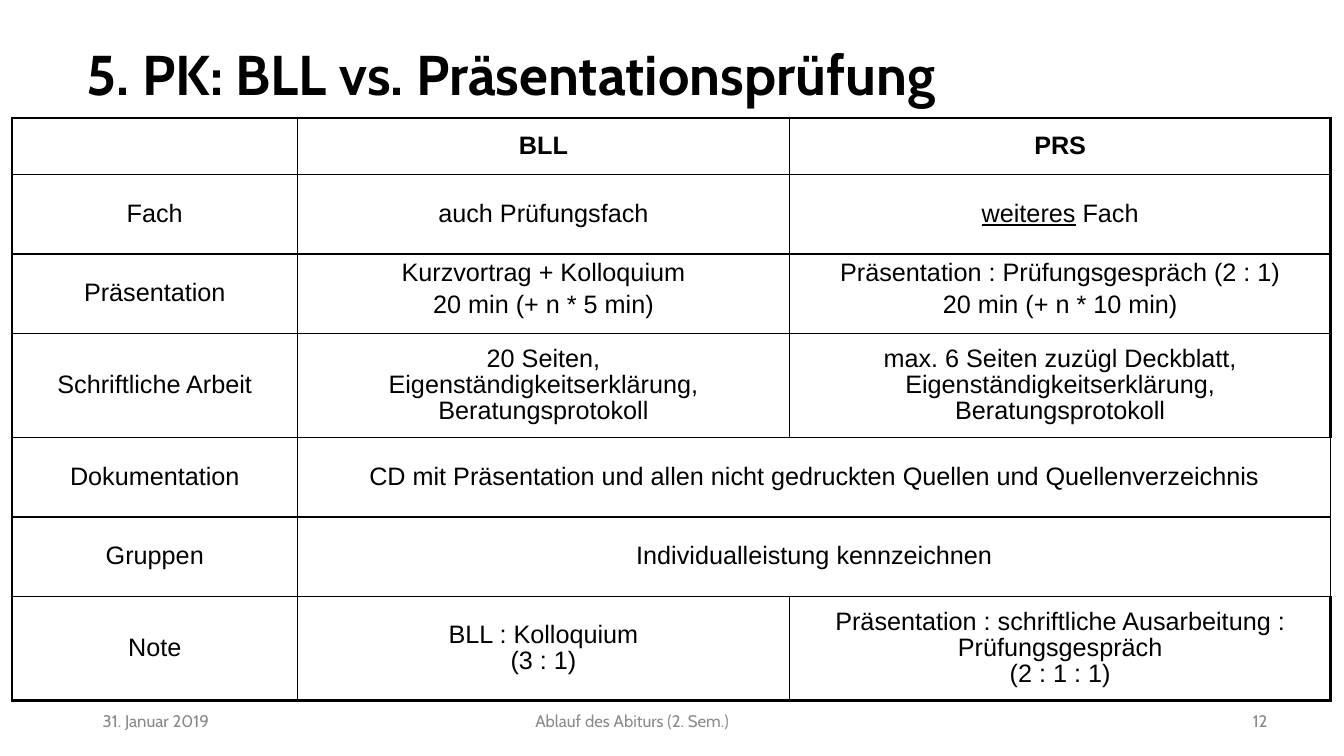
from dataclasses import dataclass
from lxml.etree import SubElement
from pptx import Presentation
from pptx.dml.color import RGBColor
from pptx.enum.text import MSO_ANCHOR, PP_ALIGN
from pptx.oxml.ns import qn
from pptx.util import Inches, Pt


@dataclass(frozen=True)
class Theme:
    ink: str = "000000"
    paper: str = "FFFFFF"
    muted: str = "898989"
    footer: str = "8C8C8C"
    heading_font: str = "Cabin"
    table_font: str = "Arial"
    title_size: int = 40
    table_size: int = 18
    footer_size: int = 12
    outer_line: float = 2.25
    inner_line: float = 1


theme = Theme()


def write(para, text, font, size, color, bold=False, align=PP_ALIGN.LEFT,
          spacing=None, after=None):
    para.alignment = align
    para.line_spacing = spacing
    para.space_after = after
    for row, line in enumerate(text.split("\n")):
        if row:
            para.add_line_break()
        for part, words in enumerate(line.split("_")):
            if words:
                span = para.add_run()
                span.text = words
                span.font.name = font
                span.font.size = Pt(size)
                span.font.bold = bold
                span.font.underline = part % 2 == 1
                span.font.color.rgb = RGBColor.from_string(color)


deck = Presentation()
deck.slide_width = Inches(13.33)
deck.slide_height = Inches(7.5)
unit = deck.slide_height // 750
page = deck.slides.add_slide(deck.slide_layouts[5])

title = page.shapes.title
title.left, title.top, title.width, title.height = (
    n * unit for n in (76, 40, 1166, 82))
title.text_frame.vertical_anchor = MSO_ANCHOR.MIDDLE
title.text_frame.word_wrap = True
write(title.text_frame.paragraphs[0], "5. PK: BLL vs. Präsentationsprüfung",
      theme.heading_font, theme.title_size, theme.ink, bold=True, spacing=Pt(36))

comparison = [
    ["", "BLL", "PRS"],
    ["Fach", "auch Prüfungsfach", "_weiteres_ Fach"],
    ["Präsentation",
     ("Kurzvortrag + Kolloquium", "20 min (+ n * 5 min)"),
     ("Präsentation : Prüfungsgespräch (2 : 1)", "20 min (+ n * 10 min)")],
    ["Schriftliche Arbeit",
     "20 Seiten,\nEigenständigkeitserklärung, Beratungsprotokoll",
     "max. 6 Seiten zuzügl Deckblatt,\nEigenständigkeitserklärung, Beratungsprotokoll"],
    ["Dokumentation",
     "CD mit Präsentation und allen nicht gedruckten Quellen und Quellenverzeichnis",
     None],
    ["Gruppen", "Individualleistung kennzeichnen", None],
    ["Note", "BLL : Kolloquium\n(3 : 1)",
     "Präsentation : schriftliche Ausarbeitung : Prüfungsgespräch\n(2 : 1 : 1)"],
]
column_widths = [283, 488, 537]
row_heights = [56, 79, 79, 103, 79, 79, 103]
last_row, last_column = len(row_heights) - 1, len(column_widths) - 1

table = page.shapes.add_table(
    len(row_heights), len(column_widths), 12 * unit, 117 * unit,
    sum(column_widths) * unit, sum(row_heights) * unit).table
table.first_row = False
table.horz_banding = False
for column, width in zip(table.columns, column_widths):
    column.width = width * unit
for row, height in zip(table.rows, row_heights):
    row.height = height * unit

for r, entries in enumerate(comparison):
    for c, entry in enumerate(entries):
        cell = table.cell(r, c)
        cell.vertical_anchor = MSO_ANCHOR.MIDDLE
        cell.margin_left = cell.margin_right = 12 * unit
        cell.margin_top = cell.margin_bottom = 5 * unit
        properties = cell._tc.get_or_add_tcPr()
        outer_sides = {"a:lnL": c == 0, "a:lnR": c == last_column,
                       "a:lnT": r == 0, "a:lnB": r == last_row}
        for side, outer in outer_sides.items():
            weight = theme.outer_line if outer else theme.inner_line
            line = SubElement(properties, qn(side), w=str(Pt(weight)))
            fill = SubElement(line, qn("a:solidFill"))
            SubElement(fill, qn("a:srgbClr"), val=theme.ink)
        cell.fill.solid()
        cell.fill.fore_color.rgb = RGBColor.from_string(theme.paper)
        if entry is None:
            table.cell(r, c - 1).merge(cell)
            continue
        paragraphs = entry if isinstance(entry, tuple) else (entry,)
        for index, text in enumerate(paragraphs):
            frame = cell.text_frame
            para = frame.add_paragraph() if index else frame.paragraphs[0]
            write(para, text, theme.table_font, theme.table_size, theme.ink,
                  bold=r == 0, align=PP_ALIGN.CENTER,
                  spacing=0.43 if len(paragraphs) > 1 else 0.93, after=Pt(14.2))

footers = [
    ("31. Januar 2019", 92, 221, PP_ALIGN.LEFT, theme.muted),
    ("Ablauf des Abiturs (2. Sem.)", 320, 614, PP_ALIGN.CENTER, theme.footer),
    ("12", 956, 311, PP_ALIGN.RIGHT, theme.muted),
]
for text, left, width, align, color in footers:
    box = page.shapes.add_textbox(left * unit, 695 * unit, width * unit, 40 * unit)
    box.text_frame.word_wrap = True
    box.text_frame.vertical_anchor = MSO_ANCHOR.MIDDLE
    write(box.text_frame.paragraphs[0], text, theme.heading_font,
          theme.footer_size, color, align=align)

deck.save("out.pptx")
